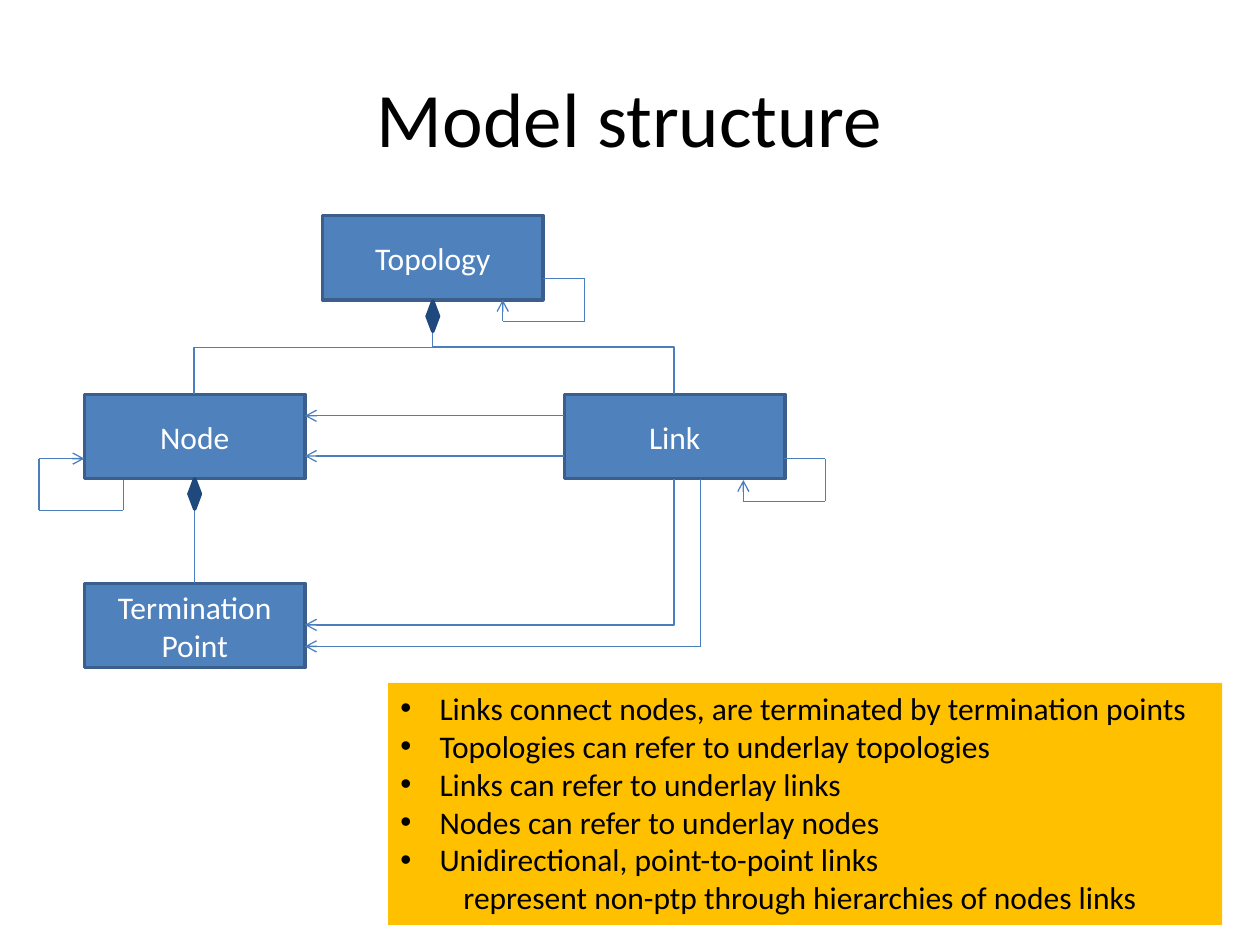
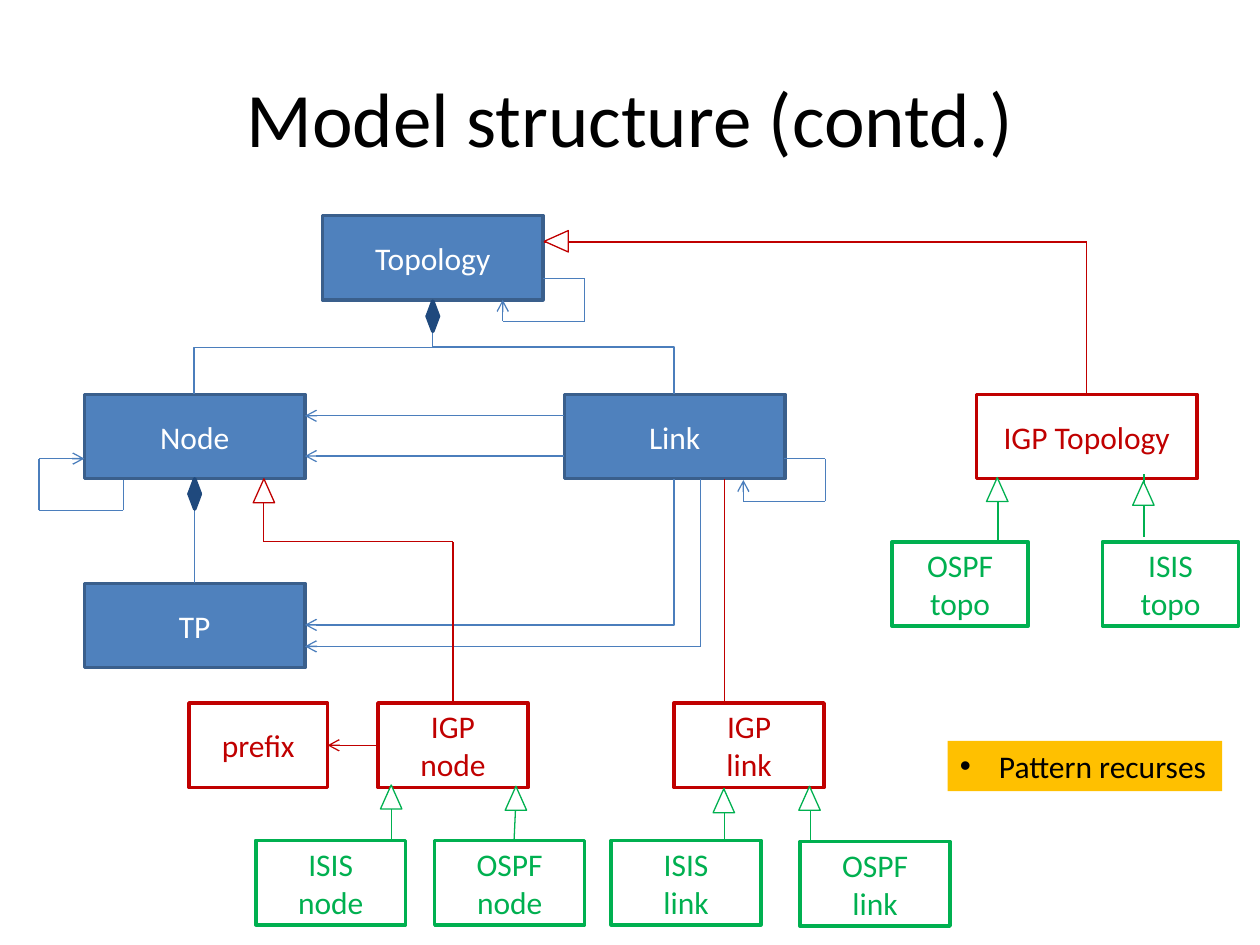
from itertools import pairwise

from lxml.etree import SubElement
from pptx import Presentation
from pptx.dml.color import RGBColor
from pptx.enum.shapes import MSO_CONNECTOR, MSO_SHAPE
from pptx.enum.text import MSO_ANCHOR, MSO_AUTO_SIZE, PP_ALIGN
from pptx.oxml.ns import qn
from pptx.util import Emu, Inches, Pt

COLORS = {
    "black": "000000", "white": "FFFFFF", "blue": "4F81BD", "edge": "3A5F8C",
    "line": "4B7EBC", "navy": "1F497D", "red": "C00000", "green": "00B050",
    "amber": "FFC000",
}
FONT = "Calibri"
BOX_H = 0.67
BASE_W = 1.75
TOP, LEFT, BOTTOM, RIGHT = range(4)


def rgb(name):
    return RGBColor.from_string(COLORS[name])


def mid_x(sp):
    return Emu(sp.left + sp.width // 2).inches


class Deck:
    """Holds the style and the current slide."""

    def __init__(self):
        self.prs = Presentation()
        self.prs.slide_width, self.prs.slide_height = Inches(10), Inches(7.5)
        self.slide = None

    def format_text(self, tf, size, color, align):
        for p in tf.paragraphs:
            p.alignment = align
            for r in p.runs:
                r.font.name, r.font.size = FONT, Pt(size)
                r.font.color.rgb = rgb(color)

    def new_slide(self, title):
        self.slide = self.prs.slides.add_slide(self.prs.slide_layouts[5])
        sp = self.slide.shapes.title
        sp.left, sp.top = Inches(0.5), Inches(0.3)
        sp.width, sp.height = Inches(9), Inches(1.25)
        sp.text_frame.text = title
        sp.text_frame.vertical_anchor = MSO_ANCHOR.MIDDLE
        self.format_text(sp.text_frame, 44, "black", PP_ALIGN.CENTER)

    def shape(self, kind, x, y, w, h, fill, line, weight):
        sp = self.slide.shapes.add_shape(
            kind, Inches(x), Inches(y), Inches(w), Inches(h))
        sp.shadow.inherit = False
        sp.fill.solid()
        sp.fill.fore_color.rgb = rgb(fill)
        sp.line.color.rgb = rgb(line)
        sp.line.width = Pt(weight)
        return sp

    def box(self, text, x, y, w=BASE_W, fill="white", line="red", color=None):
        sp = self.shape(MSO_SHAPE.RECTANGLE, x, y, w, BOX_H, fill, line, 2)
        sp.text_frame.text = text
        sp.text_frame.vertical_anchor = MSO_ANCHOR.MIDDLE
        self.format_text(sp.text_frame, 18, color or line, PP_ALIGN.CENTER)
        return sp

    def base_box(self, text, x, y):
        return self.box(text, x, y, fill="blue", line="edge", color="white")

    def triangle(self, x, y, color, rotation=0):
        sp = self.shape(MSO_SHAPE.ISOSCELES_TRIANGLE, x, y, 0.17, 0.19,
                        "white", color, 0.75)
        sp.rotation = rotation

    def diamond(self, x, y):
        for top, rotation in ((y, 0), (y + 0.12, 180)):
            sp = self.shape(MSO_SHAPE.ISOSCELES_TRIANGLE, x, top, 0.09, 0.12,
                            "navy", "navy", 2)
            sp.rotation = rotation

    def connector(self, start, end, color, arrow=False, kind=MSO_CONNECTOR.STRAIGHT):
        cx = self.slide.shapes.add_connector(
            kind, *(Inches(v) for v in (*start, *end)))
        cx.line.color.rgb = rgb(color)
        cx.line.width = Pt(0.75)
        if arrow:
            SubElement(cx.line._get_or_add_ln(), qn("a:tailEnd"), type="arrow")
        SubElement(cx._element.spPr, qn("a:effectLst"))
        return cx

    def route(self, *points, color="line", arrow=False):
        """Straight segments through the points; the arrow is on the last."""
        last = len(points) - 2
        return [self.connector(a, b, color, arrow and i == last)
                for i, (a, b) in enumerate(pairwise(points))]

    def join(self, a, a_side, b, b_side, color="line", arrow=False):
        cx = self.connector((0, 0), (1, 1), color, arrow)
        cx.begin_connect(a, a_side)
        cx.end_connect(b, b_side)

    def elbow(self, start, end, preset="bentConnector3", arrow=False):
        """Bent connector that leaves its start vertically."""
        (x1, y1), (x2, y2) = start, end
        cx = self.connector(start, end, "line", arrow, MSO_CONNECTOR.ELBOW)
        w, h = abs(y2 - y1), abs(x2 - x1)
        cx.left, cx.top = Inches((x1 + x2 - w) / 2), Inches((y1 + y2 - h) / 2)
        cx.width, cx.height = Inches(w), Inches(h)
        down = y2 > y1
        xfrm = cx._element.spPr.find(qn("a:xfrm"))
        for flip in ("flipH", "flipV"):
            xfrm.attrib.pop(flip, None)
        xfrm.set("rot", str((90 if down else 270) * 60000))
        if (x2 > x1) == down:
            xfrm.set("flipV", "1")
        cx._element.spPr.find(qn("a:prstGeom")).set("prst", preset)

    def self_loop(self, x, y):
        self.route((x, y), (x + 0.33, y), (x + 0.33, y + 0.34),
                   (x - 0.32, y + 0.34), (x - 0.32, y + 0.17), arrow=True)

    def inherits(self, start, tip, triangle_top):
        self.route(start, tip, color="green")
        self.triangle(tip[0] - 0.09, triangle_top, "green")

    def note(self, x, y, w, h, lines):
        sp = self.slide.shapes.add_textbox(
            Inches(x), Inches(y), Inches(w), Inches(h))
        sp.fill.solid()
        sp.fill.fore_color.rgb = rgb("amber")
        tf = sp.text_frame
        tf.text = "\n".join(lines)
        tf.word_wrap = False
        tf.auto_size = MSO_AUTO_SIZE.SHAPE_TO_FIT_TEXT
        self.format_text(tf, 18, "black", PP_ALIGN.LEFT)
        for p in tf.paragraphs:
            pPr = p._p.get_or_add_pPr()
            pPr.set("marL", str(Inches(0.31)))
            pPr.set("indent", str(-Inches(0.31)))
            SubElement(pPr, qn("a:buFont"), typeface="Arial")
            SubElement(pPr, qn("a:buChar"), char="•")

    def base_model(self, point_name):
        """The generic topology model that both slides show."""
        self.base_box("Topology", 2.56, 1.71)
        node = self.base_box("Node", 0.67, 3.13)
        self.base_box("Link", 4.48, 3.13)
        point = self.base_box(point_name, 0.67, 4.63)

        # Containment
        self.join(node, BOTTOM, point, TOP)
        for x in (1.54, 5.35):
            self.elbow((x, 3.13), (3.43, 2.38))

        # References from links
        for y in (3.3, 3.62):
            self.route((4.48, y), (2.42, y), arrow=True)
        self.elbow((5.35, 3.8), (2.42, 4.96), "bentConnector2", arrow=True)
        self.route((5.56, 3.8), (5.56, 5.13), (2.42, 5.13), arrow=True)

        # References to underlays
        self.route((0.98, 3.81), (0.98, 4.05), (0.31, 4.05), (0.31, 3.64),
                   (0.67, 3.64), arrow=True)
        self.self_loop(4.31, 2.21)
        self.self_loop(6.22, 3.64)

        self.diamond(1.5, 3.8)
        self.diamond(3.39, 2.39)


def model_slide(s):
    s.new_slide("Model structure")
    s.base_model("Termination Point")
    s.note(3.08, 5.42, 6.62, 1.92, [
        "Links connect nodes, are terminated by termination points",
        "Topologies can refer to underlay topologies",
        "Links can refer to underlay links",
        "Nodes can refer to underlay nodes",
        "Unidirectional, point-to-point links\v"
        "\trepresent non-ptp through hierarchies of nodes links",
    ])


def extended_model_slide(s):
    s.new_slide("Model structure (contd.)")
    s.base_model("TP")

    # IGP layer
    igp_topology = s.box("IGP Topology", 7.75, 3.13)
    s.box("IGP\nlink", 5.35, 5.58, 1.19)
    igp_node = s.box("IGP\nnode", 3, 5.58, 1.19)
    prefix = s.box("prefix", 1.5, 5.58, 1.1)
    s.route((5.75, 3.8), (5.75, 5.58), color="red")
    x = mid_x(igp_topology)
    up = s.route((x, 3.13), (x, 1.92), (4.32, 1.92), color="red")
    up[0].begin_connect(igp_topology, TOP)
    x = mid_x(igp_node)
    up = s.route((x, 5.58), (x, 4.3), (2.09, 4.3), (2.09, 3.8), color="red")
    up[0].begin_connect(igp_node, TOP)
    s.triangle(2.01, 3.8, "red")
    s.triangle(4.33, 1.82, "red", 270)
    s.join(igp_node, LEFT, prefix, RIGHT, "red", arrow=True)

    # Protocol layer
    for text, x, y, w in (
        ("OSPF\ntopo", 7.08, 4.3, 1.08), ("ISIS\ntopo", 8.75, 4.3, 1.08),
        ("ISIS\nlink", 4.85, 6.67, 1.19), ("OSPF\nlink", 6.35, 6.68, 1.19),
        ("ISIS\nnode", 2.03, 6.67, 1.19), ("OSPF\nnode", 3.45, 6.67, 1.19),
    ):
        s.box(text, x, y, w, line="green")
    for start, tip, triangle_top in (
        ((7.92, 4.3), (7.92, 3.8), 3.79), ((9.08, 4.26), (9.08, 3.76), 3.82),
        ((5.75, 6.67), (5.75, 6.25), 6.26), ((6.43, 6.68), (6.43, 6.26), 6.24),
        ((4.08, 6.67), (4.1, 6.24), 6.24), ((3.11, 6.68), (3.11, 6.23), 6.23),
    ):
        s.inherits(start, tip, triangle_top)

    s.note(7.52, 5.88, 2.18, 0.4, ["Pattern recurses"])


def main():
    deck = Deck()
    model_slide(deck)
    extended_model_slide(deck)
    deck.prs.save("out.pptx")


if __name__ == "__main__":
    main()
